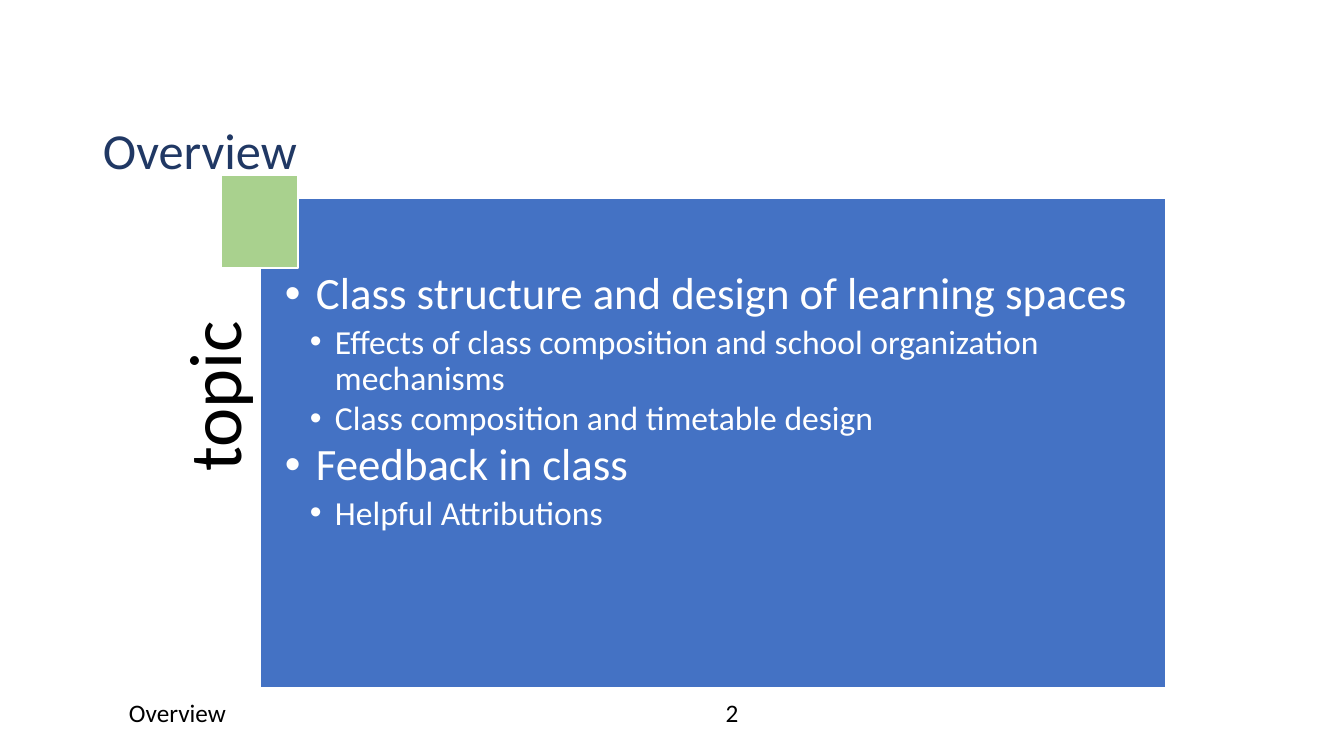
from dataclasses import dataclass

from lxml import etree
from pptx import Presentation
from pptx.dml.color import RGBColor
from pptx.enum.shapes import MSO_SHAPE
from pptx.enum.text import MSO_ANCHOR, MSO_AUTO_SIZE, PP_ALIGN
from pptx.oxml.ns import qn
from pptx.util import Pt

RECT = MSO_SHAPE.RECTANGLE
TOP = MSO_ANCHOR.TOP
FIXED = MSO_AUTO_SIZE.NONE
LEFT, CENTER, RIGHT = PP_ALIGN.LEFT, PP_ALIGN.CENTER, PP_ALIGN.RIGHT
SCALE = 914400 / 100.8


@dataclass(frozen=True)
class Theme:
    """Colours, font and type sizes of the deck."""
    font: str = "Calibri"
    navy: str = "203864"
    blue: str = "4472C4"
    green: str = "A9D18E"
    white: str = "FFFFFF"
    black: str = "000000"
    title: int = 36
    topic: int = 53
    head: int = 32
    item: int = 24
    foot: int = 18


THEME = Theme()
LEVELS = {
    0: {"size": THEME.head, "indent": (31, 31), "after": 4},
    1: {"size": THEME.item, "indent": (50, 25), "after": 3},
}
TOPICS = [
    (0, "Class structure and design of learning spaces"),
    (1, "Effects of class composition and school organization mechanisms"),
    (1, "Class composition and timetable design"),
    (0, "Feedback in class"),
    (1, "Helpful Attributions"),
]


def px(n):
    """Turn pixels into EMU."""
    return round(n * SCALE)


def frame(shape, pad=(10, 5, 10, 5)):
    """Prepare the text frame of a shape and return it."""
    text = shape.text_frame
    text.auto_size = FIXED
    text.word_wrap = True
    text.vertical_anchor = TOP
    text.margin_left, text.margin_top, text.margin_right, text.margin_bottom = map(px, pad)
    return text


def write(para, text, size, color=THEME.black, align=LEFT, spacing=1.0, after=0,
          level=0, indent=None):
    """Fill one paragraph with formatted text."""
    if indent:
        props = para._p.get_or_add_pPr()
        margin, hang = indent
        props.set("marL", str(px(margin)))
        props.set("indent", str(-px(hang)))
        etree.SubElement(props, qn("a:buFont")).set("typeface", "Arial")
        etree.SubElement(props, qn("a:buChar")).set("char", "•")
    para.level = level
    para.alignment = align
    para.line_spacing = spacing
    para.space_before = Pt(0)
    para.space_after = Pt(after)
    run = para.add_run()
    run.text = text
    run.font.name = THEME.font
    run.font.size = Pt(size)
    run.font.color.rgb = RGBColor.from_string(color)


def block(slide, box, color):
    """Draw a filled rectangle with a thin white edge."""
    shape = slide.shapes.add_shape(RECT, *map(px, box))
    shape.shadow.inherit = False
    shape.fill.solid()
    shape.fill.fore_color.rgb = RGBColor.from_string(color)
    shape.line.color.rgb = RGBColor.from_string(THEME.white)
    shape.line.width = Pt(1)
    return shape


def label(slide, box, text, pad=(10, 5, 10, 5), turn=0, **style):
    """Place a one-line text box."""
    shape = slide.shapes.add_textbox(*map(px, box))
    shape.rotation = turn
    write(frame(shape, pad).paragraphs[0], text, **style)


def heading(slide, box, text):
    """Place the slide title."""
    shape = slide.shapes.title
    shape.left, shape.top, shape.width, shape.height = map(px, box)
    write(frame(shape).paragraphs[0], text, THEME.title, THEME.navy, spacing=0.9)


def panel(slide, box, name, topics):
    """Draw the topic panel with its upright name and corner square."""
    x, y, w, h = box
    side, tall = 389, 83
    label(slide, (x - (tall + side) // 2, y + (h - tall) // 2, side, tall), name,
          pad=(0, 0, 73, 0), turn=270, size=THEME.topic, align=RIGHT, spacing=0.9)
    text = frame(block(slide, box, THEME.blue), (25, 73, 25, 25))
    for i, (level, topic) in enumerate(topics):
        para = text.add_paragraph() if i else text.paragraphs[0]
        write(para, topic, color=THEME.white, spacing=0.9, level=level, **LEVELS[level])
    block(slide, (x - 39, y - 23, 77, 93), THEME.green)


def footer(slide, box, text, number):
    """Place the footer text and the slide number."""
    x, y, w, h = box
    wide = 302
    label(slide, (x, y, 454, h), text, size=THEME.foot)
    label(slide, (x + w - wide, y, wide, h), number, size=THEME.foot, align=CENTER)


def main():
    """Build the overview slide and save it."""
    deck = Presentation()
    deck.slide_width, deck.slide_height = px(1344), px(756)
    slide = deck.slides.add_slide(deck.slide_layouts[5])
    heading(slide, (93, 121, 1159, 98), "Overview")
    panel(slide, (260, 198, 906, 490), "topic", TOPICS)
    footer(slide, (119, 692, 764, 40), "Overview", "2")
    deck.save("out.pptx")


if __name__ == "__main__":
    main()
